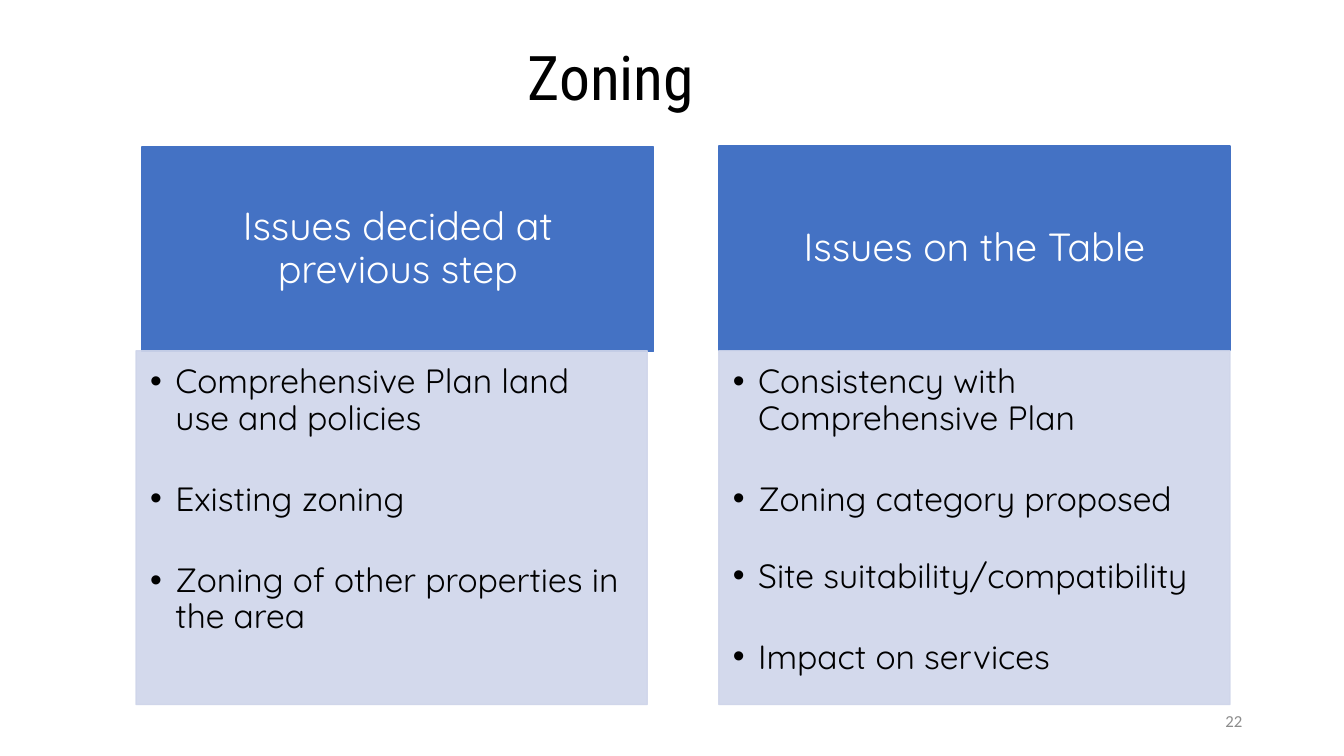
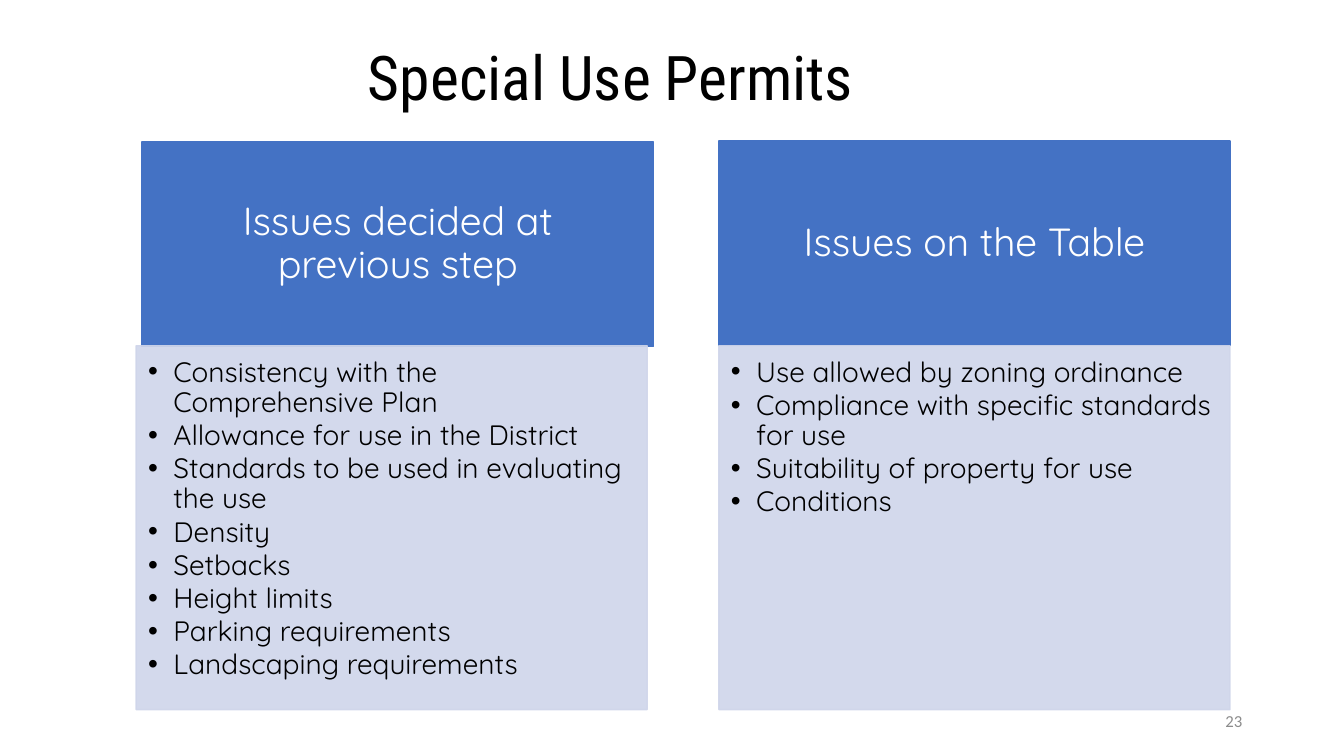
import dataclasses
import typing

import pptx
import pptx.dml.color
import pptx.enum.shapes
import pptx.enum.text
import pptx.oxml.ns
import pptx.util
from lxml import etree

Inches = pptx.util.Inches
Pt = pptx.util.Pt
RGB = pptx.dml.color.RGBColor
Align = pptx.enum.text.PP_ALIGN
Anchor = pptx.enum.text.MSO_ANCHOR
qn = pptx.oxml.ns.qn

BLUE = RGB(0x44, 0x72, 0xC4)
PALE = RGB(0xCF, 0xD5, 0xEA)
WHITE = RGB(0xFF, 0xFF, 0xFF)
BLACK = RGB(0x00, 0x00, 0x00)
GREY = RGB(0x8C, 0x8C, 0x8C)

HEADS = ("Issues decided at previous step", "Issues on the Table")
LEFT, PITCH, WIDTH, TALL = 1.35, 5.78, 5.07, 2.03
SHIFTS = ((0.06, 0.01), (0, 0))  # header against body, per column
INDENT = 0.25


@dataclasses.dataclass(frozen=True)
class Item:
    text: str
    gap: float


@dataclasses.dataclass(frozen=True)
class Page:
    title: str
    number: int
    top: float
    height: float
    size: int
    insets: tuple[float, ...]
    lists: tuple[list[Item], ...]


def spaced(gap: float, *texts: str) -> list[Item]:
    return [Item(text, gap) for text in texts]


PAGES = (
    Page("Zoning ", 22, 3.48, 3.51, 24, (0.14, 0.14, 0.19, 0.21), (
        spaced(32, "Comprehensive Plan land use and policies", "Existing zoning",
               "Zoning of other properties in the area"),
        [Item("Consistency with Comprehensive Plan", 32),
         Item("Zoning category proposed", 29),
         Item("Site suitability/compatibility", 32),
         Item("Impact on services", 0)],
    )),
    Page("Special Use Permits ", 23, 3.43, 3.61, 20, (0.12, 0.12, 0.16, 0.17), (
        spaced(2.1, "Consistency with the Comprehensive Plan",
               "Allowance for use in the District",
               "Standards to be used in evaluating the use",
               "Density", "Setbacks", "Height limits",
               "Parking requirements", "Landscaping requirements"),
        spaced(2.1, "Use allowed by zoning ordinance",
               "Compliance with specific standards for use",
               "Suitability of property for use", "Conditions"),
    )),
)


def style(para: typing.Any, font: str, size: int, color: RGB,
          align: Align, lead: float = 1) -> None:
    para.alignment = align
    para.line_spacing = lead
    for run in para.runs:
        run.font.name = font
        run.font.size = Pt(size)
        run.font.color.rgb = color


def inset(frame: typing.Any, sides: tuple[float, ...]) -> None:
    """Set the left, top, right and bottom margins."""
    (frame.margin_left, frame.margin_top,
     frame.margin_right, frame.margin_bottom) = map(Inches, sides)


def block(slide: typing.Any, box: tuple[float, ...], color: RGB,
          alpha: int = 100) -> typing.Any:
    """Add a plain rectangle and return it; alpha is in percent."""
    shape = slide.shapes.add_shape(
        pptx.enum.shapes.MSO_SHAPE.RECTANGLE, *map(Inches, box))
    shape.shadow.inherit = False
    shape.fill.solid()
    shape.fill.fore_color.rgb = color
    shape.line.color.rgb = color
    shape.line.width = Pt(1)
    if alpha < 100:
        for node in shape._element.spPr.iter(qn("a:srgbClr")):
            etree.SubElement(node, qn("a:alpha"), val=str(alpha * 1000))
    shape.text_frame.word_wrap = True
    return shape


def bullet(para: typing.Any) -> None:
    props = para._p.get_or_add_pPr()
    props.set("marL", str(Inches(INDENT)))
    props.set("indent", str(-Inches(INDENT)))
    etree.SubElement(props, qn("a:buFont"), typeface="Arial")
    etree.SubElement(props, qn("a:buChar"), char="•")


def head(slide: typing.Any, page: Page, col: int) -> None:
    dx, dy = SHIFTS[col]
    box = (LEFT + col * PITCH + dx, page.top - TALL + dy, WIDTH, TALL)
    frame = block(slide, box, BLUE).text_frame
    inset(frame, (0.22, 0.12, 0.22, 0.12))
    frame.vertical_anchor = Anchor.MIDDLE
    frame.text = HEADS[col]
    style(frame.paragraphs[0], "Quicksand", 28, WHITE, Align.CENTER, 0.9)


def body(slide: typing.Any, page: Page, col: int) -> None:
    box = (LEFT + col * PITCH, page.top, WIDTH, page.height)
    frame = block(slide, box, PALE, 90).text_frame
    inset(frame, page.insets)
    frame.vertical_anchor = Anchor.TOP
    items = page.lists[col]
    frame.text = "\n".join(item.text for item in items)
    for para, item in zip(frame.paragraphs, items):
        style(para, "Quicksand", page.size, BLACK, Align.LEFT, 0.9)
        para.space_after = Pt(item.gap)
        bullet(para)


def title(slide: typing.Any, text: str) -> None:
    shape = slide.shapes.title
    shape.left, shape.top, shape.width, shape.height = map(
        Inches, (0.38, 0.31, 11.5, 0.97))
    frame = shape.text_frame
    frame.text = text
    frame.auto_size = pptx.enum.text.MSO_AUTO_SIZE.NONE
    frame.vertical_anchor = Anchor.MIDDLE
    style(frame.paragraphs[0], "Roboto Condensed", 44, BLACK, Align.CENTER, 0.9)


def folio(slide: typing.Any, number: int) -> None:
    """Add the page number."""
    frame = slide.shapes.add_textbox(
        *map(Inches, (9.42, 6.95, 3, 0.4))).text_frame
    frame.word_wrap = True
    frame.vertical_anchor = Anchor.MIDDLE
    frame.text = str(number)
    style(frame.paragraphs[0], "Calibri", 12, GREY, Align.RIGHT)


def main() -> None:
    deck = pptx.Presentation()
    deck.slide_width, deck.slide_height = Inches(13.33), Inches(7.5)
    for page in PAGES:
        slide = deck.slides.add_slide(deck.slide_layouts.get_by_name("Title Only"))
        title(slide, page.title)
        folio(slide, page.number)
        for col in range(len(HEADS)):
            head(slide, page, col)
            body(slide, page, col)
    deck.save("out.pptx")


if __name__ == "__main__":
    main()
